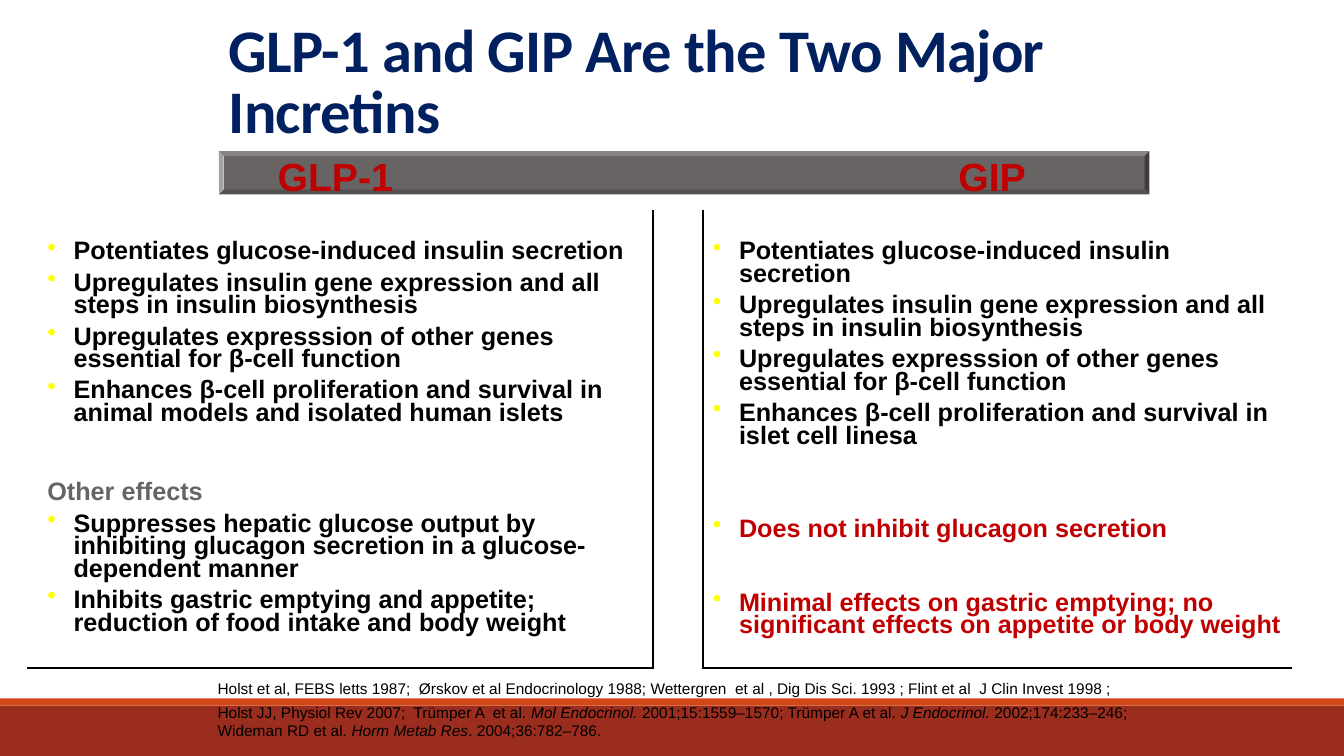
from lxml import etree
from pptx import Presentation
from pptx import util as u
from pptx.dml.color import RGBColor
from pptx.enum import shapes, text
from pptx.oxml import ns

COLORS = {
    "navy": "002060", "red": "C00000", "gray": "696464", "black": "000000",
    "bullet": "FFFF00", "brick": "9B2D1F", "orange": "D34817",
}
NO_GRID_STYLE = "{2D5ABB26-0587-4C30-8999-92F81FD0307C}"

SHARED_EFFECTS = [
    "Potentiates glucose-induced insulin secretion",
    "Upregulates insulin gene expression and all steps in insulin biosynthesis",
    "Upregulates expresssion of other genes essential for β-cell function",
]
GLP1_EFFECTS = SHARED_EFFECTS + [
    "Enhances β-cell proliferation and survival in animal models and isolated human islets"]
GIP_EFFECTS = SHARED_EFFECTS + [
    "Enhances β-cell proliferation and survival in islet cell linesa"]
GLP1_OTHER = [
    "Other effects",
    "Suppresses hepatic glucose output by inhibiting glucagon secretion in a glucose-dependent manner",
    "Inhibits gastric emptying and appetite; reduction of food intake and body weight",
]
GIP_OTHER = [
    "Does not inhibit glucagon secretion",
    "Minimal effects on gastric emptying; no significant effects on appetite or body weight",
]
# Each reference is a list of runs; every second run is an italic journal name
REFERENCES = [
    ["Holst et al, FEBS letts 1987;  Ørskov et al Endocrinology 1988; Wettergren  et al , "
     "Dig Dis Sci. 1993 ; Flint et al  J Clin Invest 1998 ;"],
    ["Holst JJ, Physiol Rev 2007;  Trümper A  et al. ", "Mol Endocrinol.",
     " 2001;15:1559–1570; Trümper A et al. ", "J Endocrinol.",
     " 2002;174:233–246; Wideman RD et al. ", "Horm Metab Res", ". 2004;36:782–786."],
]


def rgb(name):
    return RGBColor.from_string(COLORS[name])


def add_bar(slide, kind, left, top, width, height, color):
    shape = slide.shapes.add_shape(
        kind, u.Inches(left), u.Inches(top), u.Inches(width), u.Inches(height))
    shape.shadow.inherit = False
    shape.fill.solid()
    shape.fill.fore_color.rgb = rgb(color)
    shape.line.fill.background()
    return shape


def add_text_box(slide, left, top, width, height):
    box = slide.shapes.add_textbox(
        u.Inches(left), u.Inches(top), u.Inches(width), u.Inches(height))
    box.text_frame.word_wrap = True
    box.text_frame.vertical_anchor = text.MSO_ANCHOR.BOTTOM
    return box.text_frame


def format_runs(paragraph, size, color, bold=True, font="Arial"):
    for run in paragraph.runs:
        run.font.name = font
        run.font.size = u.Pt(size)
        run.font.bold = bold
        run.font.color.rgb = rgb(color)


def add_bullet(paragraph):
    properties = paragraph._p.get_or_add_pPr()
    bullet_color = etree.SubElement(properties, ns.qn("a:buClr"))
    etree.SubElement(bullet_color, ns.qn("a:srgbClr"), val=COLORS["bullet"])
    etree.SubElement(properties, ns.qn("a:buChar"), char="•")


def add_borders(cell, sides):
    for side in sides:
        line = etree.SubElement(
            cell._tc.get_or_add_tcPr(), ns.qn("a:ln" + side), w=str(u.Pt(1.5)))
        fill = etree.SubElement(line, ns.qn("a:solidFill"))
        etree.SubElement(fill, ns.qn("a:srgbClr"), val=COLORS["black"])


def fill_header(cell, heading):
    cell.margin_left, cell.margin_top = u.Inches(0), u.Inches(0.07)
    cell.text_frame.text = heading
    paragraph = cell.text_frame.paragraphs[0]
    paragraph.alignment = text.PP_ALIGN.CENTER
    paragraph.line_spacing = 0.8
    format_runs(paragraph, 28, "red")


def fill_effects(cell, effects, left, top, color="black", gap=6.2, heading=False):
    cell.margin_left, cell.margin_top = u.Inches(left), u.Inches(top)
    cell.text_frame.text = "\n".join(effects)
    for index, paragraph in enumerate(cell.text_frame.paragraphs):
        is_heading = heading and index == 0
        paragraph.line_spacing = 0.8
        paragraph.space_before = u.Pt(gap if index else 0)
        properties = paragraph._p.get_or_add_pPr()
        properties.set("marL", str(u.Inches(0.26)))
        properties.set("indent", str(-u.Inches(0.26)))
        if not is_heading:
            add_bullet(paragraph)
        format_runs(paragraph, 18, "gray" if is_heading else color)


def add_comparison(slide):
    widths, heights = [6.21, 0.49, 5.84], [0.53, 2.66, 1.89]
    frame = slide.shapes.add_table(
        3, 3, u.Inches(0.27), u.Inches(1.55), u.Inches(sum(widths)), u.Inches(sum(heights)))
    table = frame.table
    table.first_row = table.horz_banding = False
    table._tbl.tblPr.find(ns.qn("a:tableStyleId")).text = NO_GRID_STYLE
    for column, width in zip(table.columns, widths):
        column.width = u.Inches(width)
    for row, height in zip(table.rows, heights):
        row.height = u.Inches(height)

    # Rules beside the gap column and under the two text columns
    borders = [["", "", ""], ["R", "LR", "L"], ["RB", "LR", "LB"]]
    for row, row_borders in enumerate(borders):
        for column, sides in enumerate(row_borders):
            cell = table.cell(row, column)
            add_borders(cell, sides)
            cell.fill.background()

    fill_header(table.cell(0, 0), "GLP-1")
    fill_header(table.cell(0, 2), "GIP")
    fill_effects(table.cell(1, 0), GLP1_EFFECTS, 0.2, 0.32)
    fill_effects(table.cell(1, 2), GIP_EFFECTS, 0.1, 0.32)
    fill_effects(table.cell(2, 0), GLP1_OTHER, 0.2, 0.05, heading=True)
    fill_effects(table.cell(2, 2), GIP_OTHER, 0.1, 0.41, color="red", gap=36.8)


def add_title(slide):
    frame = add_text_box(slide, 2.17, 0.14, 9.1, 1.36)
    frame.text = "GLP-1 and GIP Are the Two Major Incretins"
    paragraph = frame.paragraphs[0]
    paragraph.line_spacing = 0.85
    format_runs(paragraph, 43.2, "navy", font="Calibri")
    paragraph.runs[0].font._element.set("spc", "-50")


def add_references(slide):
    frame = add_text_box(slide, 2.06, 6.68, 9.4, 0.71)
    for index, parts in enumerate(REFERENCES):
        paragraph = frame.add_paragraph() if index else frame.paragraphs[0]
        paragraph.space_before = u.Pt(4)
        for position, part in enumerate(parts):
            run = paragraph.add_run()
            run.text = part
            run.font.italic = position % 2 == 1
        format_runs(paragraph, 11, "black", bold=False)


def main():
    presentation = Presentation()
    presentation.slide_width = u.Inches(13.33)
    presentation.slide_height = u.Inches(7.5)
    slide = presentation.slides.add_slide(presentation.slide_layouts[6])

    # Footer bands and header bar
    rectangle = shapes.MSO_SHAPE.RECTANGLE
    add_bar(slide, rectangle, 0, 7, 13.33, 0.5, "brick")
    add_bar(slide, rectangle, 0, 6.93, 13.33, 0.07, "orange")
    header = add_bar(slide, shapes.MSO_SHAPE.BEVEL, 2.17, 1.5, 9.23, 0.43, "gray")
    header.adjustments[0] = 0.11

    # Content
    add_comparison(slide)
    add_title(slide)
    add_references(slide)
    presentation.save("out.pptx")


if __name__ == "__main__":
    main()
